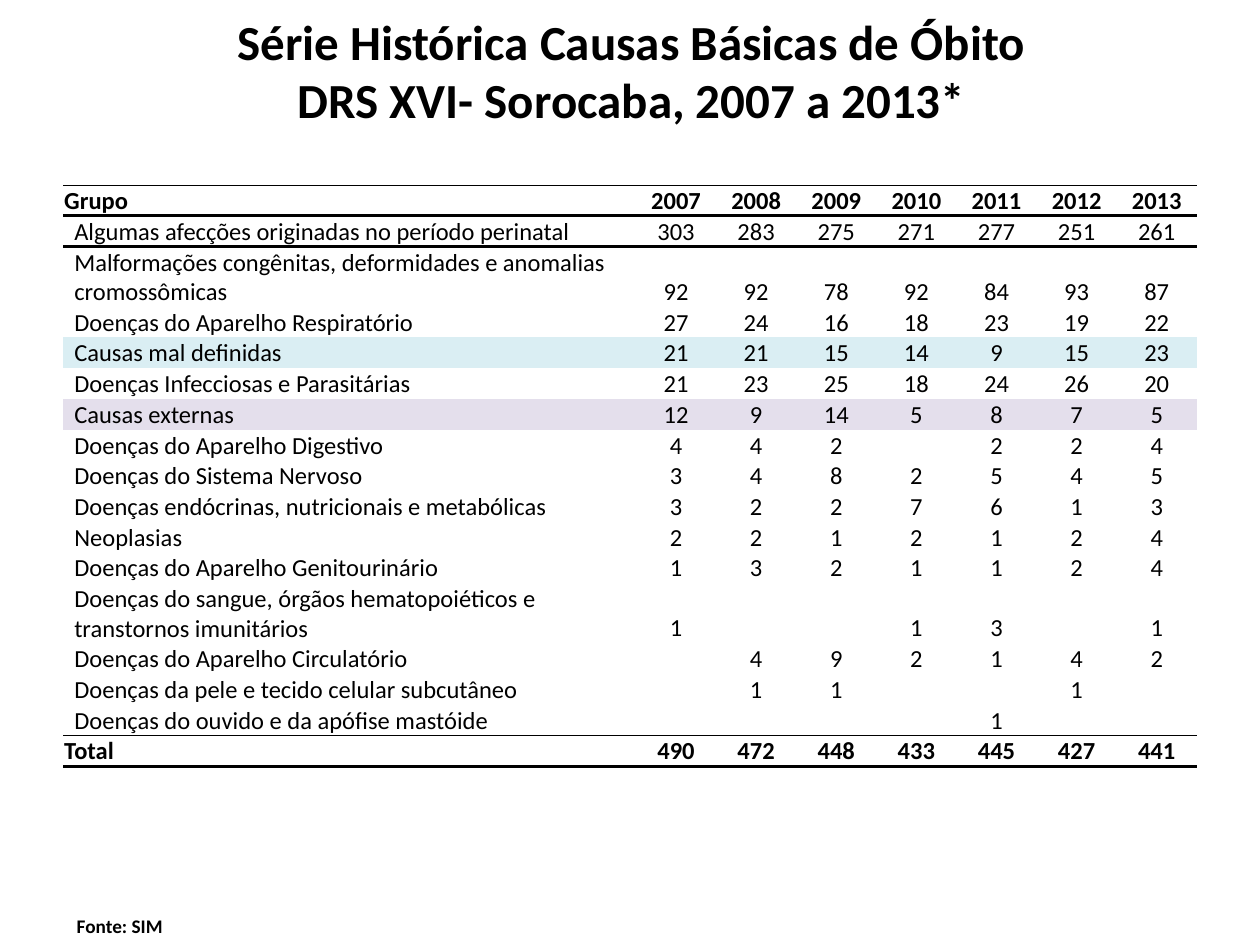
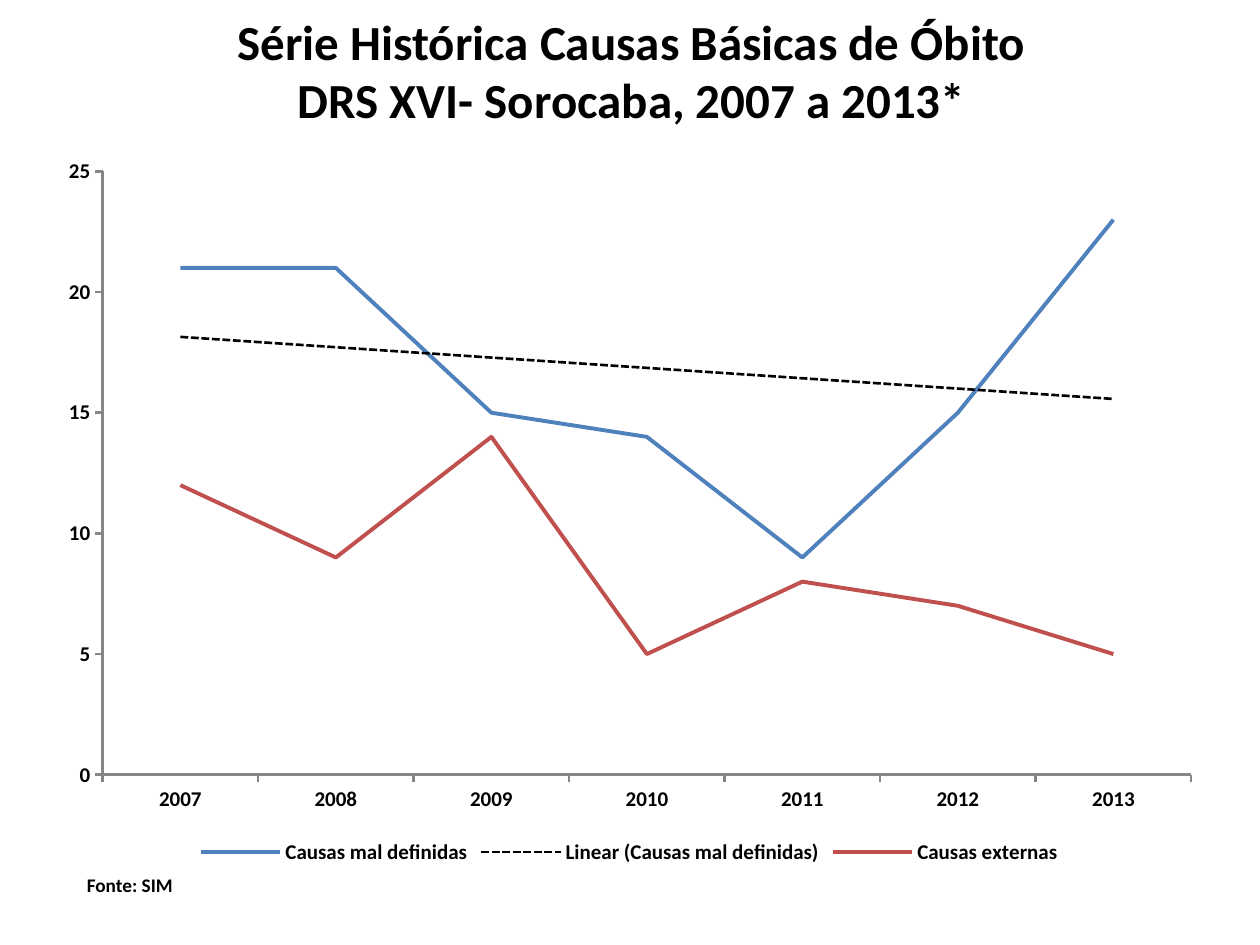
"""Build two slides on basic causes of death in DRS XVI, Sorocaba: a table and a line chart."""
from lxml import etree
from pptx import Presentation
from pptx.chart.data import CategoryChartData
from pptx.dml.color import RGBColor
from pptx.enum.chart import XL_CHART_TYPE, XL_LEGEND_POSITION, XL_TICK_MARK
from pptx.enum.text import MSO_ANCHOR, MSO_AUTO_SIZE, PP_ALIGN
from pptx.oxml import parse_xml
from pptx.oxml.ns import nsdecls, qn
from pptx.util import Inches, Pt

LINE_CHART = XL_CHART_TYPE.LINE
LEGEND_BOTTOM = XL_LEGEND_POSITION.BOTTOM
TICK_OUTSIDE, TICK_NONE = XL_TICK_MARK.OUTSIDE, XL_TICK_MARK.NONE
MIDDLE, BOTTOM = MSO_ANCHOR.MIDDLE, MSO_ANCHOR.BOTTOM
LEFT, CENTER = PP_ALIGN.LEFT, PP_ALIGN.CENTER
FIT_SHAPE = MSO_AUTO_SIZE.SHAPE_TO_FIT_TEXT

BLACK = RGBColor(0x00, 0x00, 0x00)
AXIS_GRAY = RGBColor(0x86, 0x86, 0x86)
PALE_BLUE = RGBColor(0xDA, 0xEE, 0xF3)
PALE_PURPLE = RGBColor(0xE4, 0xDF, 0xEC)
BLUE = RGBColor(0x4F, 0x81, 0xBD)
RED = RGBColor(0xC0, 0x50, 0x4D)
FONT = "Calibri"
NO_STYLE = "{2D5ABB26-0587-4C30-8999-92F81FD0307C}"
CELL = Inches(0.1)
THIN, THICK = Pt(0.5), Pt(2)

TITLE_LINES = ["Série Histórica Causas Básicas de Óbito", "DRS XVI- Sorocaba, 2007 a 2013*"]
SOURCE_LINES = ["Fonte: SIM"]
ILL_DEFINED, EXTERNAL = "Causas mal definidas", "Causas externas"
YEARS = ["2007", "2008", "2009", "2010", "2011", "2012", "2013"]
DEATHS = {
    "Algumas afecções originadas no período perinatal": [303, 283, 275, 271, 277, 251, 261],
    "Malformações congênitas, deformidades e anomalias cromossômicas": [92, 92, 78, 92, 84, 93, 87],
    "Doenças do Aparelho Respiratório": [27, 24, 16, 18, 23, 19, 22],
    ILL_DEFINED: [21, 21, 15, 14, 9, 15, 23],
    "Doenças Infecciosas e Parasitárias": [21, 23, 25, 18, 24, 26, 20],
    EXTERNAL: [12, 9, 14, 5, 8, 7, 5],
    "Doenças do Aparelho Digestivo": [4, 4, 2, "", 2, 2, 4],
    "Doenças do Sistema Nervoso": [3, 4, 8, 2, 5, 4, 5],
    "Doenças endócrinas, nutricionais e metabólicas": [3, 2, 2, 7, 6, 1, 3],
    "Neoplasias": [2, 2, 1, 2, 1, 2, 4],
    "Doenças do Aparelho Genitourinário": [1, 3, 2, 1, 1, 2, 4],
    "Doenças do sangue, órgãos hematopoiéticos e transtornos imunitários": [1, "", "", 1, 3, "", 1],
    "Doenças do Aparelho Circulatório": ["", 4, 9, 2, 1, 4, 2],
    "Doenças da pele e tecido celular subcutâneo": ["", 1, 1, "", "", 1, ""],
    "Doenças do ouvido e da apófise mastóide": ["", "", "", "", 1, "", ""],
}
TOTALS = [490, 472, 448, 433, 445, 427, 441]
ROW_FILLS = {ILL_DEFINED: PALE_BLUE, EXTERNAL: PALE_PURPLE}
SERIES_COLORS = {ILL_DEFINED: BLUE, EXTERNAL: RED}


def style_font(font, size, bold):
    """Apply the shared typeface and colour."""
    font.name, font.size, font.bold = FONT, Pt(size), bold
    font.color.rgb = BLACK


def add_text(slide, box, lines, size, alignment, wrap):
    """Add a bold text box placed in grid cells."""
    shape = slide.shapes.add_textbox(*[int(CELL * length) for length in box])
    frame = shape.text_frame
    frame.word_wrap = wrap
    frame.auto_size = MSO_AUTO_SIZE.NONE if wrap else FIT_SHAPE
    frame.vertical_anchor = MIDDLE if wrap else MSO_ANCHOR.TOP
    paragraph = frame.paragraphs[0]
    paragraph.alignment = alignment
    for index, line in enumerate(lines):
        if index:
            paragraph.add_line_break()
        run = paragraph.add_run()
        run.text = line
        style_font(run.font, size, True)


presentation = Presentation()
presentation.slide_width = CELL * 100
presentation.slide_height = CELL * 75
blank_layout = presentation.slide_layouts[6]
table_slide, chart_slide = [presentation.slides.add_slide(blank_layout) for _ in range(2)]

for slide, source_box in [(table_slide, (5.1, 72.1, 8.9, 2.9)), (chart_slide, (5.9, 68.8, 8.9, 2.9))]:
    add_text(slide, (5.1, 2.1, 90, 6.9), TITLE_LINES, 28, CENTER, True)
    add_text(slide, source_box, SOURCE_LINES, 11, LEFT, False)

rows = [["Grupo", *YEARS], *[[cause, *counts] for cause, counts in DEATHS.items()], ["Total", *TOTALS]]
last = len(rows) - 1
row_borders = {0: (THIN, THICK), 1: (THICK, None), last - 1: (None, THIN), last: (THIN, THICK)}
table_frame = table_slide.shapes.add_table(
    len(rows), len(rows[0]), CELL * 5, int(CELL * 14.7), CELL * 90, CELL * 46)
table = table_frame.table
table.first_row = table.horz_banding = False
table_frame._element.find(".//" + qn("a:tableStyleId")).text = NO_STYLE
for index, column in enumerate(table.columns):
    column.width = int(CELL * (6.36 if index else 45.48))

for row_index, values in enumerate(rows):
    table.rows[row_index].height = CELL * 2
    is_summary = row_index in (0, last)
    for column_index, value in enumerate(values):
        cell = table.cell(row_index, column_index)
        cell.vertical_anchor = BOTTOM
        indented = column_index == 0 and not is_summary
        cell.margin_left = Inches(0.09 if indented else 0.01)
        cell.margin_right = cell.margin_top = Inches(0.01)
        cell.margin_bottom = 0
        paragraph = cell.text_frame.paragraphs[0]
        paragraph.alignment = CENTER if column_index else LEFT
        if value == "":
            paragraph._p.get_or_add_endParaRPr().set("sz", "1400")
        else:
            run = paragraph.add_run()
            run.text = str(value)
            style_font(run.font, 14, is_summary)
        if values[0] in ROW_FILLS:
            cell.fill.solid()
            cell.fill.fore_color.rgb = ROW_FILLS[values[0]]
        else:
            cell.fill.background()
        top, bottom = row_borders.get(row_index, (None, None))
        for tag, width in (("lnB", bottom), ("lnT", top)):
            if width:
                cell._tc.get_or_add_tcPr().insert(0, parse_xml(
                    f'<a:{tag} {nsdecls("a")} w="{int(width)}"><a:solidFill>'
                    f'<a:srgbClr val="{BLACK}"/></a:solidFill></a:{tag}>'))
table_frame.height = CELL * 46

chart_data = CategoryChartData()
chart_data.categories = YEARS
for name in SERIES_COLORS:
    chart_data.add_series(name, DEATHS[name])
chart = chart_slide.shapes.add_chart(
    LINE_CHART, int(CELL * 3.5), int(CELL * 11.3), int(CELL * 92.9), int(CELL * 57.7), chart_data).chart
style_font(chart.font, 10, False)
chart.has_title = False
chart.has_legend = True
chart.legend.position = LEGEND_BOTTOM
chart.legend.include_in_layout = False
style_font(chart.legend.font, 12, True)

for axis in (chart.category_axis, chart.value_axis):
    axis.has_major_gridlines = False
    axis.major_tick_mark, axis.minor_tick_mark = TICK_OUTSIDE, TICK_NONE
    axis.format.line.color.rgb = AXIS_GRAY
    axis.format.line.width = Pt(1.5)
    style_font(axis.tick_labels.font, 12, True)
chart.value_axis.minimum_scale, chart.value_axis.maximum_scale = 0, 25
chart.value_axis.major_unit = 5

plot = chart.plots[0]
plot.vary_by_categories = False
for series in plot.series:
    series.smooth = False
    series.format.line.color.rgb = SERIES_COLORS[series.name]
    series.format.line.width = Pt(2.25)

trend_line = parse_xml(
    f'<c:trendline {nsdecls("c", "a")}><c:name>Linear ({ILL_DEFINED})</c:name>'
    f'<c:spPr><a:ln w="{int(Pt(1.5))}"><a:solidFill><a:srgbClr val="{BLACK}"/></a:solidFill>'
    '<a:prstDash val="sysDash"/></a:ln></c:spPr><c:trendlineType val="linear"/>'
    '<c:dispRSqr val="0"/><c:dispEq val="0"/></c:trendline>')
plot.series[0]._element.find(qn("c:cat")).addprevious(trend_line)

plot_area = chart._chartSpace.find(".//" + qn("c:plotArea"))
for layout in plot_area.findall(qn("c:layout")):
    plot_area.remove(layout)
layout = parse_xml(f'<c:layout {nsdecls("c")}><c:manualLayout/></c:layout>')
for tag, value in [("layoutTarget", "inner"), ("xMode", "edge"), ("yMode", "edge"),
                   ("x", 0.05), ("y", 0.04), ("w", 0.93), ("h", 0.83)]:
    etree.SubElement(layout[0], qn("c:" + tag)).set("val", str(value))
plot_area.insert(0, layout)

presentation.save("out.pptx")
